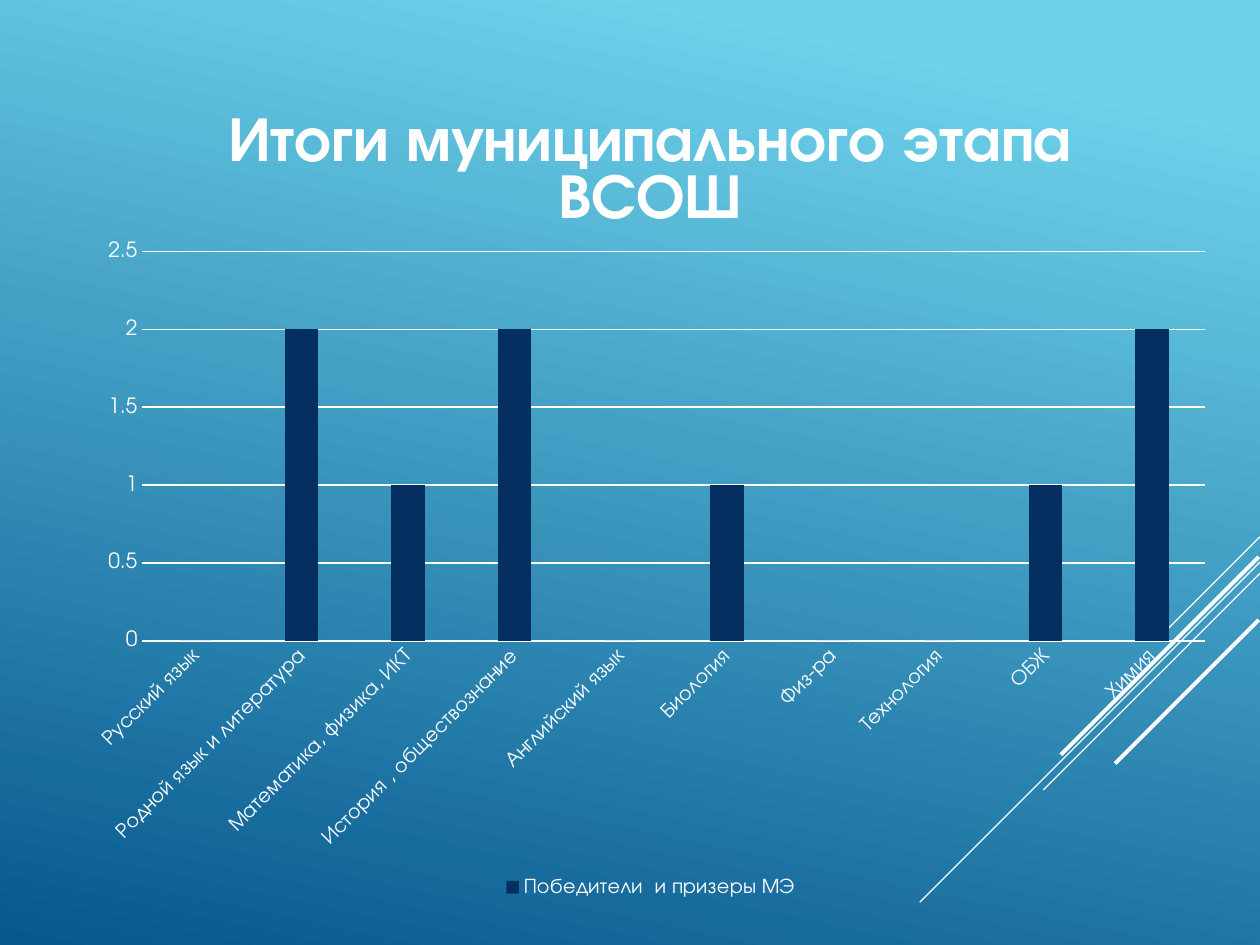
from lxml import etree
from pptx import Presentation
from pptx.chart.data import CategoryChartData
from pptx.dml.color import RGBColor
from pptx.enum.chart import XL_CHART_TYPE, XL_LEGEND_POSITION, XL_TICK_MARK
from pptx.oxml import parse_xml
from pptx.oxml.ns import nsdecls, qn
from pptx.util import Inches, Pt

COLUMNS = XL_CHART_TYPE.COLUMN_CLUSTERED
BOTTOM = XL_LEGEND_POSITION.BOTTOM
NO_TICK = XL_TICK_MARK.NONE

WHITE = RGBColor(0xFF, 0xFF, 0xFF)
NAVY = RGBColor(0x05, 0x2F, 0x61)
SKY = RGBColor(0x6E, 0xD2, 0xEB)
DEEP = RGBColor(0x06, 0x58, 0x8E)
FACE = "TeX Gyre Adventor"

CELL = Inches(0.1)  # the slide is a grid of 100 columns by 75 rows

RESULTS = {
    "Русский язык": 0,
    "Родной язык и литература": 2,
    "Математика, физика, ИКТ": 1,
    "История , обществознание": 2,
    "Английский язык": 0,
    "Биология": 1,
    "Физ-ра": 0,
    "Технология": 0,
    "ОБЖ": 1,
    "Химия": 2,
}

# right end column, right end row, run to the lower left, width in points
STRIPES = [
    (100, 42.6, 8.3, 0.75),
    (100, 44.6, 27, 0.75),
    (100, 45.5, 17.2, 0.75),
    (99.9, 44.2, 15.7, 2.25),
    (99.9, 49.2, 11.4, 2.25),
]


def grid(*cells):
    return [round(cell * CELL) for cell in cells]


def style(font, size=12, bold=False, color=WHITE):
    font.name, font.size, font.bold = FACE, Pt(size), bold
    font.color.rgb = color


def write(frame, text, **form):
    """Put text in the frame, formatted as style() allows."""
    run = frame.paragraphs[0].add_run()
    run.text = text
    style(run.font, **form)


def rule(line, width=0.75):
    line.color.rgb = WHITE
    line.width = Pt(width)


class Deck:
    def __init__(self):
        self.prs = Presentation()
        self.prs.slide_width, self.prs.slide_height = grid(100, 75)
        self.slide = self.prs.slides.add_slide(self.prs.slide_layouts[6])

    def shade(self, stops, angle):
        """Fill the background; the angle runs clockwise."""
        fill = self.slide.background.fill
        fill.gradient()
        fill.gradient_angle = 360 - angle
        for stop, (place, color) in zip(fill.gradient_stops, stops):
            stop.position = place
            stop.color.rgb = color

    def stripe(self, col, row, run, width):
        """Draw a line falling to the lower left at 45 degrees."""
        ends = grid(col, row, col - run, row + run)
        line = self.slide.shapes.add_connector(1, *ends)
        rule(line.line, width)
        etree.SubElement(line._element.spPr, qn("a:effectLst"))

    def chart(self, box, title, name, values):
        data = CategoryChartData()
        data.categories = list(values)
        data.add_series(name, list(values.values()))
        chart = self.slide.shapes.add_chart(COLUMNS, *grid(*box), data).chart
        style(chart.font, size=10)
        chart.has_title = True
        write(chart.chart_title.text_frame, title, size=36, bold=True)
        chart.chart_title.include_in_layout = False
        chart.has_legend = True
        chart.legend.position = BOTTOM
        chart.legend.include_in_layout = False
        style(chart.legend.font)

        plot = chart.plots[0]
        plot.gap_width, plot.overlap = 219, -27
        plot.vary_by_categories = False
        fill = plot.series[0].format.fill
        fill.solid()
        fill.fore_color.rgb = NAVY
        self.axes(chart)
        self.place(chart, x=0.06, y=0.215, w=0.92, h=0.47)

    def axes(self, chart):
        cat, val = chart.category_axis, chart.value_axis
        for axis in (cat, val):
            axis.major_tick_mark = axis.minor_tick_mark = NO_TICK
            style(axis.tick_labels.font)
        rule(cat.format.line)
        cat.has_major_gridlines = False
        body = cat._element.find(qn("c:txPr")).find(qn("a:bodyPr"))
        body.set("rot", "-2700000")
        val.minimum_scale, val.maximum_scale, val.major_unit = 0, 2.5, 0.5
        val.format.line.fill.background()
        val.has_major_gridlines = True
        rule(val.major_gridlines.format.line)
        val.tick_labels.number_format = "General"
        val.tick_labels.number_format_is_linked = False

    def place(self, chart, **shares):
        """Fix the inner plot area as shares of the chart."""
        area = chart._chartSpace.chart.plotArea
        for old in area.findall(qn("c:layout")):
            area.remove(old)
        tags = '<c:layoutTarget val="inner"/>'
        tags += '<c:xMode val="edge"/><c:yMode val="edge"/>'
        tags += "".join(f'<c:{key} val="{val}"/>' for key, val in shares.items())
        area.insert(0, parse_xml(
            f'<c:layout {nsdecls("c")}><c:manualLayout>{tags}'
            "</c:manualLayout></c:layout>"))


def main():
    deck = Deck()
    deck.shade([(0.1, SKY), (1, DEEP)], angle=102)
    for stripe in STRIPES:
        deck.stripe(*stripe)
    deck.chart((5.8, 5.8, 91.7, 65.8), "Итоги муниципального этапа ВСОШ",
               "Победители  и призеры МЭ", RESULTS)
    deck.prs.save("out.pptx")


if __name__ == "__main__":
    main()
